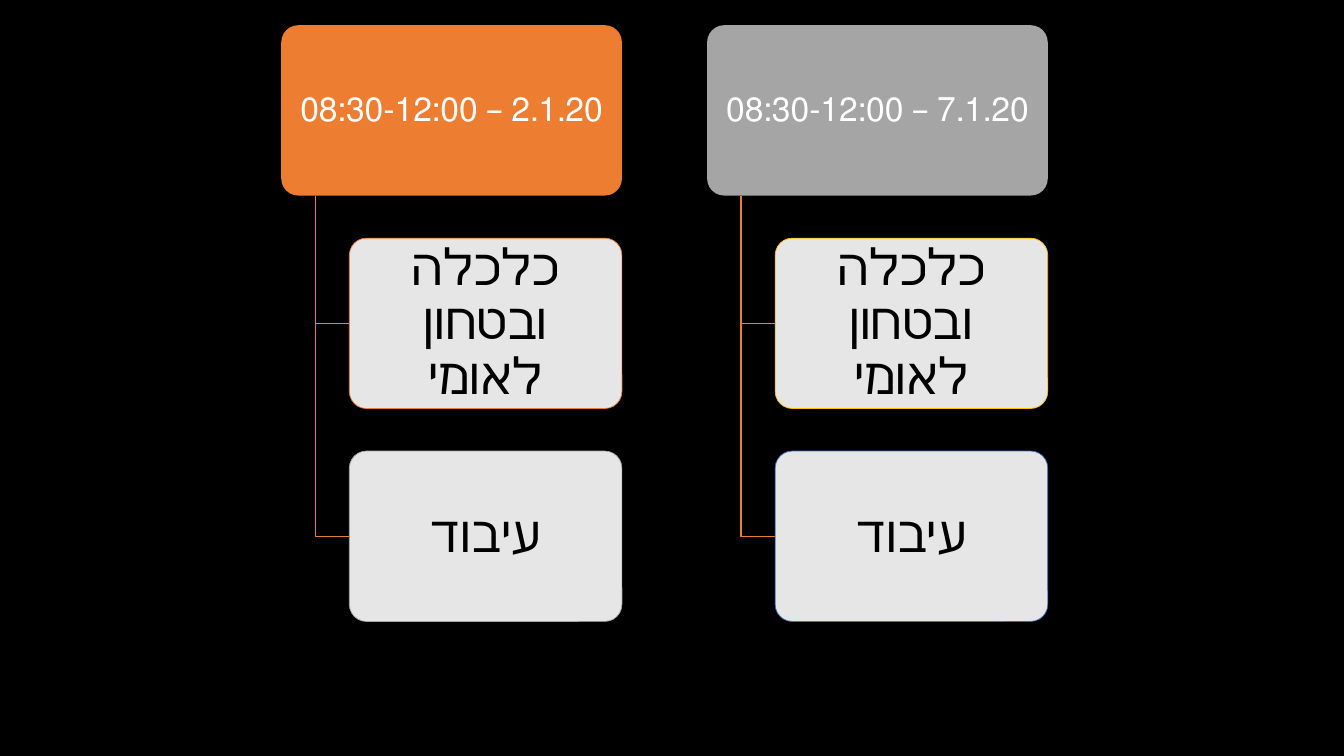
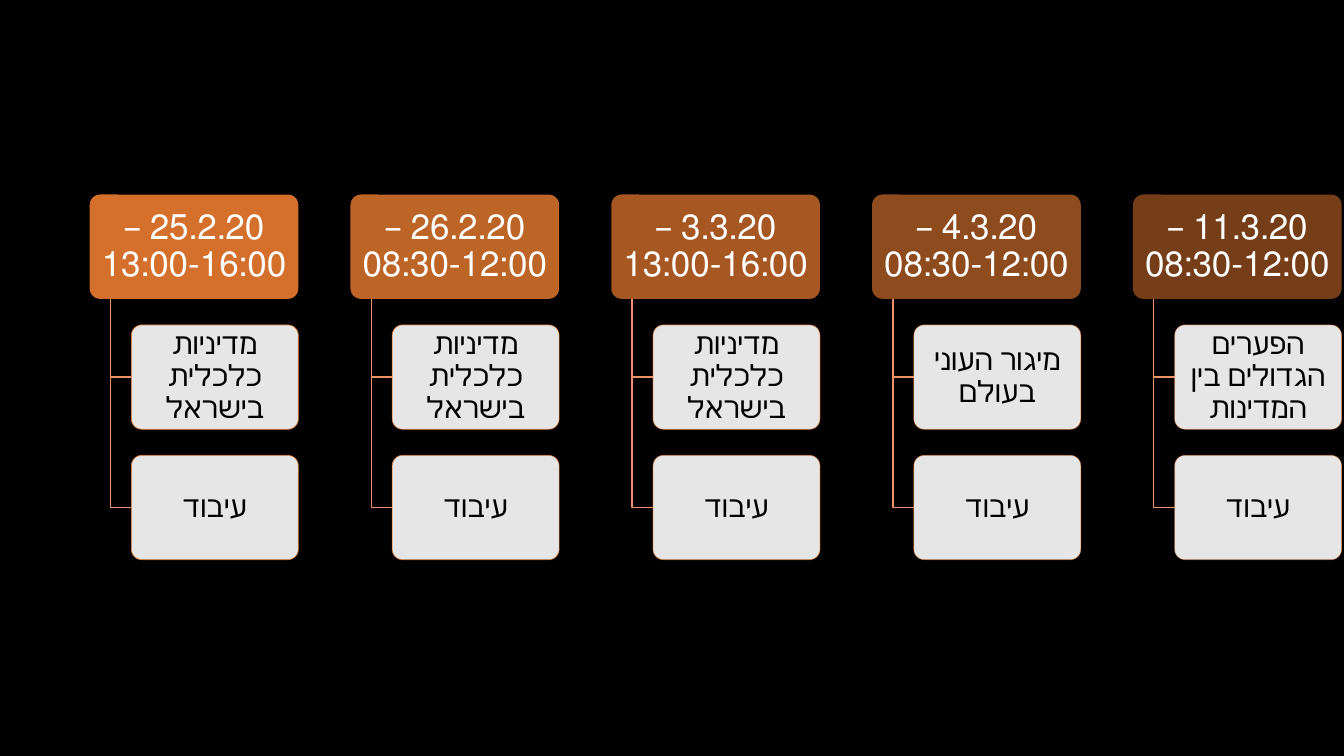
from dataclasses import dataclass

from lxml import etree
from pptx import Presentation
from pptx import util as u
from pptx.dml.color import RGBColor
from pptx.enum import shapes, text
from pptx.oxml import ns

# Shared look
BLACK = RGBColor(0x00, 0x00, 0x00)
WHITE = RGBColor(0xFF, 0xFF, 0xFF)
ORANGE = RGBColor(0xED, 0x7D, 0x31)
LIGHT_ORANGE = RGBColor(0xEF, 0x91, 0x66)
GRAY = RGBColor(0xA5, 0xA5, 0xA5)
GOLD = RGBColor(0xFF, 0xC0, 0x00)
BLUE = RGBColor(0x44, 0x72, 0xC4)
FONT = "Calibri"
CARD_ALPHA = 90

# Proportions of a column, as shares of its heading's width
BOX_HEIGHT = 0.5
ROW_STEP = 0.625
COLUMN_STEP = 1.25
STEM_INDENT = 0.1
CARD_INDENT = 0.2

ECONOMY_AND_SECURITY = "כלכלה ובטחון לאומי"
ISRAEL_POLICY = "מדיניות כלכלית בישראל"
PROCESSING = "עיבוד"


@dataclass(frozen=True)
class Paint:
    color: RGBColor
    alpha: float = 100


@dataclass(frozen=True)
class Card:
    words: str
    border: Paint


@dataclass(frozen=True)
class Column:
    heading: str
    fill: Paint
    cards: tuple[Card, ...]


@dataclass(frozen=True)
class TextStyle:
    size: float
    color: RGBColor
    inset_x: float
    inset_y: float


@dataclass(frozen=True)
class Schedule:
    left: float
    top: float
    width: float
    stem_color: RGBColor
    heading_style: TextStyle
    card_style: TextStyle
    columns: tuple[Column, ...]


def apply_paint(fill, paint: Paint, parent) -> None:
    """Fill solidly, with transparency where the paint asks for it."""
    fill.solid()
    fill.fore_color.rgb = paint.color
    if paint.alpha < 100:
        color = parent.find(ns.qn("a:solidFill"))[0]
        alpha = etree.SubElement(color, ns.qn("a:alpha"))
        alpha.set("val", str(round(paint.alpha * 1000)))


def draw_box(page, left: float, top: float, width: float, height: float,
             words: str, style: TextStyle, fill: Paint,
             border: Paint | None = None) -> None:
    box = page.shapes.add_shape(
        shapes.MSO_SHAPE.ROUNDED_RECTANGLE,
        *map(u.Inches, (left, top, width, height)))
    box.adjustments[0] = 0.1
    box.shadow.inherit = False
    apply_paint(box.fill, fill, box._element.spPr)
    if border:
        box.line.width = u.Pt(0.5)
        apply_paint(box.line.fill, border, box.line._get_or_add_ln())
    else:
        box.line.fill.background()

    frame = box.text_frame
    frame.word_wrap = True
    frame.vertical_anchor = text.MSO_ANCHOR.MIDDLE
    frame.margin_left = frame.margin_right = u.Inches(style.inset_x)
    frame.margin_top = frame.margin_bottom = u.Inches(style.inset_y)
    para = frame.paragraphs[0]
    para.text = words
    para.alignment = text.PP_ALIGN.CENTER
    para.line_spacing = 0.9
    para._p.get_or_add_pPr().set("rtl", "1")
    para.font.name = FONT
    para.font.size = u.Pt(style.size)
    para.font.color.rgb = style.color


def draw_stem(page, left: float, top: float, right: float, bottom: float,
              color: RGBColor) -> None:
    """Draw an elbow down from a heading and across to a card."""
    x, y, end_x, end_y = map(u.Inches, (left, top, right, bottom))
    builder = page.shapes.build_freeform(x, y)
    builder.add_line_segments([(x, end_y), (end_x, end_y)], close=False)
    stem = builder.convert_to_shape()
    stem.shadow.inherit = False
    stem.fill.background()
    stem.line.color.rgb = color
    stem.line.width = u.Pt(1)


def draw_schedule(page, plan: Schedule) -> None:
    width, height = plan.width, plan.width * BOX_HEIGHT
    for index, column in enumerate(plan.columns):
        left = plan.left + index * width * COLUMN_STEP
        card_left = left + width * CARD_INDENT
        draw_box(page, left, plan.top, width, height,
                 column.heading, plan.heading_style, column.fill)
        for row, card in enumerate(column.cards, start=1):
            top = plan.top + row * width * ROW_STEP
            draw_stem(page, left + width * STEM_INDENT, plan.top + height,
                      card_left, top + height / 2, plan.stem_color)
            draw_box(page, card_left, top, width * (1 - CARD_INDENT), height,
                     card.words, plan.card_style, Paint(WHITE, CARD_ALPHA),
                     card.border)


def january_column(heading: str, fill: RGBColor, first: RGBColor,
                   second: RGBColor) -> Column:
    return Column(heading, Paint(fill), (
        Card(ECONOMY_AND_SECURITY, Paint(first)),
        Card(PROCESSING, Paint(second))))


def spring_column(index: int, heading: str, topic: str) -> Column:
    """Headings fade from 90 to 50 %, and so do the ten card borders."""
    first, second = (Paint(ORANGE, 90 - 40 * (2 * index + row) / 9)
                     for row in range(2))
    return Column(heading, Paint(ORANGE, 90 - 10 * index),
                  (Card(topic, first), Card(PROCESSING, second)))


JANUARY = Schedule(
    left=2.79, top=0.25, width=3.38, stem_color=ORANGE,
    heading_style=TextStyle(24, WHITE, 0.05, 0.03),
    card_style=TextStyle(36, BLACK, 0.07, 0.05),
    columns=(
        january_column("2.1.20 – 08:30-12:00", ORANGE, ORANGE, GRAY),
        january_column("7.1.20 – 08:30-12:00", GRAY, GOLD, BLUE),
    ))

SPRING_SESSIONS = (
    ("25.2.20 – 13:00-16:00", ISRAEL_POLICY),
    ("26.2.20 – 08:30-12:00", ISRAEL_POLICY),
    ("3.3.20 – 13:00-16:00", ISRAEL_POLICY),
    ("4.3.20 – 08:30-12:00", "מיגור העוני בעולם"),
    ("11.3.20 – 08:30-12:00", "הפערים הגדולים בין המדינות"),
)

SPRING = Schedule(
    left=0.89, top=1.93, width=2.07, stem_color=LIGHT_ORANGE,
    heading_style=TextStyle(25, WHITE, 0.05, 0.03),
    card_style=TextStyle(21, BLACK, 0.04, 0.03),
    columns=tuple(spring_column(index, *session)
                  for index, session in enumerate(SPRING_SESSIONS)))


def main() -> None:
    deck = Presentation()
    deck.slide_width, deck.slide_height = u.Inches(40 / 3), u.Inches(7.5)

    # Black background for every slide
    background = deck.slide_master.background.fill
    background.solid()
    background.fore_color.rgb = BLACK

    blank = deck.slide_layouts[6]
    for plan in (JANUARY, SPRING):
        draw_schedule(deck.slides.add_slide(blank), plan)
    deck.save("out.pptx")


if __name__ == "__main__":
    main()
